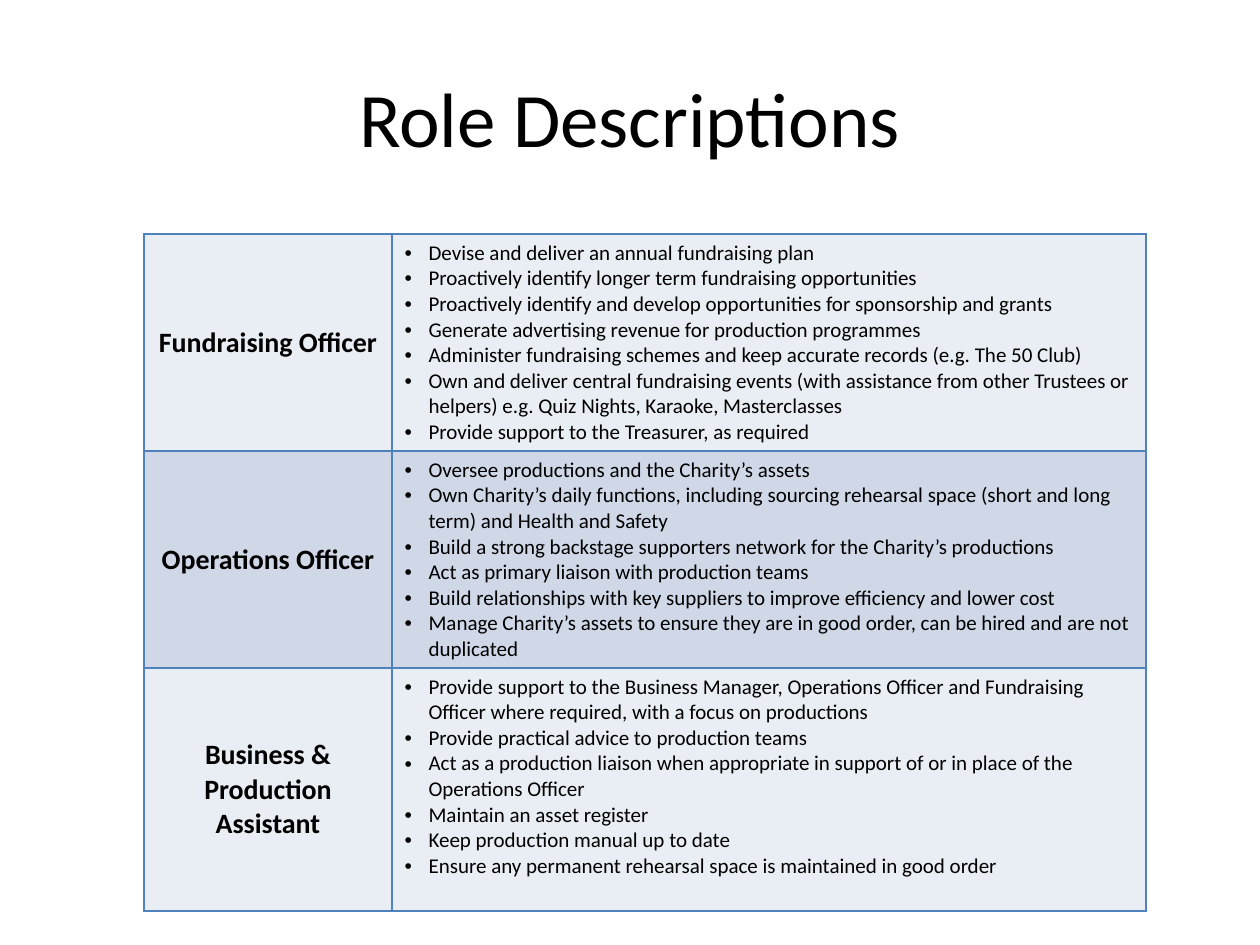
import dataclasses

import lxml.etree
import pptx
import pptx.dml.color
import pptx.enum.text
import pptx.oxml.ns
import pptx.util

PX_PER_INCH = 126


@dataclasses.dataclass(frozen=True)
class Theme:
    font: str = "Calibri"
    text: str = "000000"
    border: str = "4F81BD"
    bands: tuple = ("E9EDF4", "D0D8E8")
    title_size: int = 44
    role_size: int = 16
    duty_size: int = 12
    border_width: int = 1


THEME = Theme()

ROLES = [
    ("Fundraising Officer", [
        "Devise and deliver an annual fundraising plan",
        "Proactively identify longer term fundraising opportunities",
        "Proactively identify and develop opportunities for sponsorship and grants",
        "Generate advertising revenue for production programmes",
        "Administer fundraising schemes and keep accurate records (e.g. The 50 Club)",
        "Own and deliver central fundraising events (with assistance from other Trustees or "
        "helpers) e.g. Quiz Nights, Karaoke, Masterclasses",
        "Provide support to the Treasurer, as required",
    ]),
    ("Operations Officer", [
        "Oversee productions and the Charity’s assets",
        "Own Charity’s daily functions, including sourcing rehearsal space (short and long "
        "term) and Health and Safety",
        "Build a strong backstage supporters network for the Charity’s productions",
        "Act as primary liaison with production teams",
        "Build relationships with key suppliers to improve efficiency and lower cost",
        "Manage Charity’s assets to ensure they are in good order, can be hired and are not "
        "duplicated",
    ]),
    ("Business & Production Assistant", [
        "Provide support to the Business Manager, Operations Officer and Fundraising "
        "Officer where required, with a focus on productions",
        "Provide practical advice to production teams",
        "Act as a production liaison when appropriate in support of or in place of the "
        "Operations Officer",
        "Maintain an asset register",
        "Keep production manual up to date",
        "Ensure any permanent rehearsal space is maintained in good order",
    ]),
]


def px(length):
    return pptx.util.Emu(round(length * 914400 / PX_PER_INCH))


def rgb(colour):
    return pptx.dml.color.RGBColor.from_string(colour)


def add_span(para, text, size, bold=False):
    span = para.add_run()
    span.text = text
    span.font.name = THEME.font
    span.font.size = pptx.util.Pt(size)
    span.font.bold = bold
    span.font.color.rgb = rgb(THEME.text)


def add_bullet(para, indent):
    properties = para._p.get_or_add_pPr()
    properties.set("marL", str(px(indent)))
    properties.set("indent", str(-px(indent)))
    font = lxml.etree.SubElement(properties, pptx.oxml.ns.qn("a:buFont"))
    font.set("typeface", "Arial")
    bullet = lxml.etree.SubElement(properties, pptx.oxml.ns.qn("a:buChar"))
    bullet.set("char", "•")


def style_cell(cell, colour):
    cell.fill.solid()
    cell.fill.fore_color.rgb = rgb(colour)
    properties = cell._tc.get_or_add_tcPr()
    for position, side in enumerate(("lnL", "lnR", "lnT", "lnB")):
        line = lxml.etree.Element(pptx.oxml.ns.qn("a:" + side))
        line.set("w", str(pptx.util.Pt(THEME.border_width)))
        fill = lxml.etree.SubElement(line, pptx.oxml.ns.qn("a:solidFill"))
        lxml.etree.SubElement(fill, pptx.oxml.ns.qn("a:srgbClr")).set("val", THEME.border)
        properties.insert(position, line)


def add_title(page, left, top, width, height, text):
    box = page.shapes.add_textbox(px(left), px(top), px(width), px(height))
    frame = box.text_frame
    frame.word_wrap = True
    frame.vertical_anchor = pptx.enum.text.MSO_ANCHOR.MIDDLE
    para = frame.paragraphs[0]
    para.alignment = pptx.enum.text.PP_ALIGN.CENTER
    add_span(para, text, THEME.title_size)


def fill_role(cell, role):
    cell.vertical_anchor = pptx.enum.text.MSO_ANCHOR.MIDDLE
    para = cell.text_frame.paragraphs[0]
    para.alignment = pptx.enum.text.PP_ALIGN.CENTER
    add_span(para, role, THEME.role_size, bold=True)


def fill_duties(cell, duties):
    frame = cell.text_frame
    for number, duty in enumerate(duties):
        para = frame.add_paragraph() if number else frame.paragraphs[0]
        add_bullet(para, 24)
        add_span(para, duty, THEME.duty_size)


def add_roles_table(page, left, top, width, role_width, row_heights, roles):
    holder = page.shapes.add_table(
        len(roles), 2, px(left), px(top), px(width), px(sum(row_heights)))
    table = holder.table
    table.first_row = False
    table.horz_banding = False
    table.columns[0].width = px(role_width)
    table.columns[1].width = px(width - role_width)
    for number, (role, duties) in enumerate(roles):
        row = table.rows[number]
        row.height = px(row_heights[number])
        fill_role(row.cells[0], role)
        fill_duties(row.cells[1], duties)
        for cell in row.cells:
            style_cell(cell, THEME.bands[number % len(THEME.bands)])


def main():
    deck = pptx.Presentation()
    deck.slide_width = px(1260)
    deck.slide_height = px(945)
    page = deck.slides.add_slide(deck.slide_layouts[6])
    add_title(page, 63, 38, 1134, 158, "Role Descriptions")
    add_roles_table(page, 144, 234, 1002, 248, (217, 217, 243), ROLES)
    deck.save("out.pptx")


if __name__ == "__main__":
    main()
